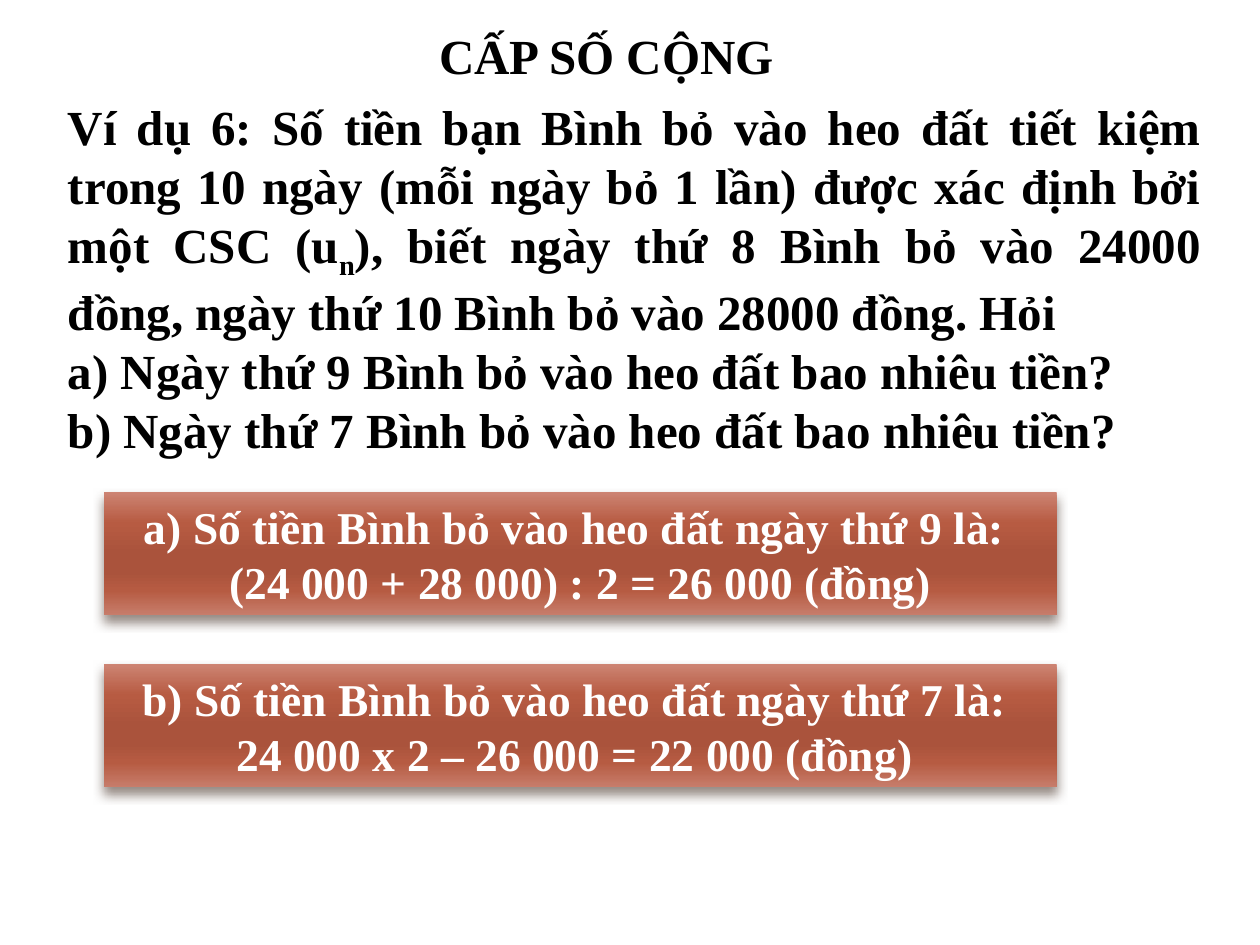
from lxml import etree
from pptx import Presentation
from pptx.dml.color import RGBColor
from pptx.enum.shapes import MSO_SHAPE
from pptx.enum.text import MSO_ANCHOR, MSO_AUTO_SIZE, PP_ALIGN
from pptx.oxml.ns import qn
from pptx.util import Cm, Pt

RECTANGLE = MSO_SHAPE.RECTANGLE
LEFT, CENTER, JUSTIFY = PP_ALIGN.LEFT, PP_ALIGN.CENTER, PP_ALIGN.JUSTIFY
MIDDLE = MSO_ANCHOR.MIDDLE
GROW = MSO_AUTO_SIZE.SHAPE_TO_FIT_TEXT
BLACK = RGBColor(0x00, 0x00, 0x00)
WHITE = RGBColor(0xFF, 0xFF, 0xFF)
SHADOW = RGBColor(0x4E, 0x3B, 0x30)
GRADIENT = [
    (0, RGBColor(0xCD, 0x84, 0x73)),
    (25, RGBColor(0xB7, 0x5B, 0x42)),
    (50, RGBColor(0xAA, 0x53, 0x3C)),
    (65, RGBColor(0xAA, 0x53, 0x3C)),
    (80, RGBColor(0xB6, 0x5B, 0x42)),
    (100, RGBColor(0xC7, 0x7D, 0x6B)),
]


def write(box, paragraphs, align, size, color):
    """Fill a box with paragraphs, each a list of (text, baseline) spans."""
    font_format = {"name": "Times New Roman", "size": Pt(size), "bold": True}
    frame = box.text_frame
    frame.word_wrap = True
    for index, spans in enumerate(paragraphs):
        para = frame.paragraphs[0] if index == 0 else frame.add_paragraph()
        para.alignment = align
        for text, baseline in spans:
            span = para.add_run()
            span.text = text
            for name, value in font_format.items():
                setattr(span.font, name, value)
            span.font.color.rgb = color
            if baseline:
                span.font._element.set("baseline", str(baseline * 1000))


def add_color(parent, color):
    return etree.SubElement(parent, qn("a:srgbClr"), val=str(color))


deck = Presentation()
deck.slide_width, deck.slide_height = Cm(25.4), Cm(19.05)
page = deck.slides.add_slide(deck.slide_layouts[6])

# Problem statement and heading
problem = [
    [("Ví dụ 6: Số tiền bạn Bình bỏ vào heo đất tiết kiệm trong 10 ngày "
      "(mỗi ngày bỏ 1 lần) được xác định bởi một CSC (u", 0),
     ("n", -25),
     ("), biết ngày thứ 8 Bình bỏ vào 24000 đồng, "
      "ngày thứ 10 Bình bỏ vào 28000 đồng. Hỏi", 0)],
    [("a) Ngày thứ 9 Bình bỏ vào heo đất bao nhiêu tiền?", 0)],
    [("b) Ngày thứ 7 Bình bỏ vào heo đất bao nhiêu tiền?", 0)],
]
heading = [[(" CẤP SỐ CỘNG", 0)]]
for left, top, width, height, paragraphs, align in [
    (1.12, 1.83, 23.34, 7.44, problem, JUSTIFY),
    (8.36, 0.38, 9.53, 1.45, heading, LEFT),
]:
    box = page.shapes.add_textbox(Cm(left), Cm(top), Cm(width), Cm(height))
    write(box, paragraphs, align, 28, BLACK)
    box.text_frame.auto_size = GROW

# Answer panels
answers = [
    ("a) Số tiền Bình bỏ vào heo đất ngày thứ 9 là: ",
     "(24 000 + 28 000) : 2 = 26 000 (đồng)"),
    ("b) Số tiền Bình bỏ vào heo đất ngày thứ 7 là: ",
     "24 000 x 2 – 26 000 = 22 000 (đồng) "),
]
for index, lines in enumerate(answers):
    panel = page.shapes.add_shape(
        RECTANGLE, Cm(2.1), Cm(9.92 + 3.47 * index), Cm(19.2), Cm(2.48))
    panel.line.fill.background()
    panel.text_frame.vertical_anchor = MIDDLE
    write(panel, [[(line, 0)] for line in lines], CENTER, 26, WHITE)

    # Top-to-bottom gradient
    panel.fill.gradient()
    panel.fill.gradient_angle = 270
    properties = panel._element.spPr
    stops = properties.find(".//" + qn("a:gsLst"))
    for stop in list(stops):
        stops.remove(stop)
    for position, color in GRADIENT:
        stop = etree.SubElement(stops, qn("a:gs"), pos=str(position * 1000))
        add_color(stop, color)

    # Soft shadow straight below
    panel.shadow.inherit = False
    shadow = etree.SubElement(
        properties.find(qn("a:effectLst")), qn("a:outerShdw"),
        blurRad=str(Pt(6)), dist=str(Pt(4)), dir="5400000", rotWithShape="0")
    etree.SubElement(add_color(shadow, SHADOW), qn("a:alpha"), val="60000")

deck.save("out.pptx")
